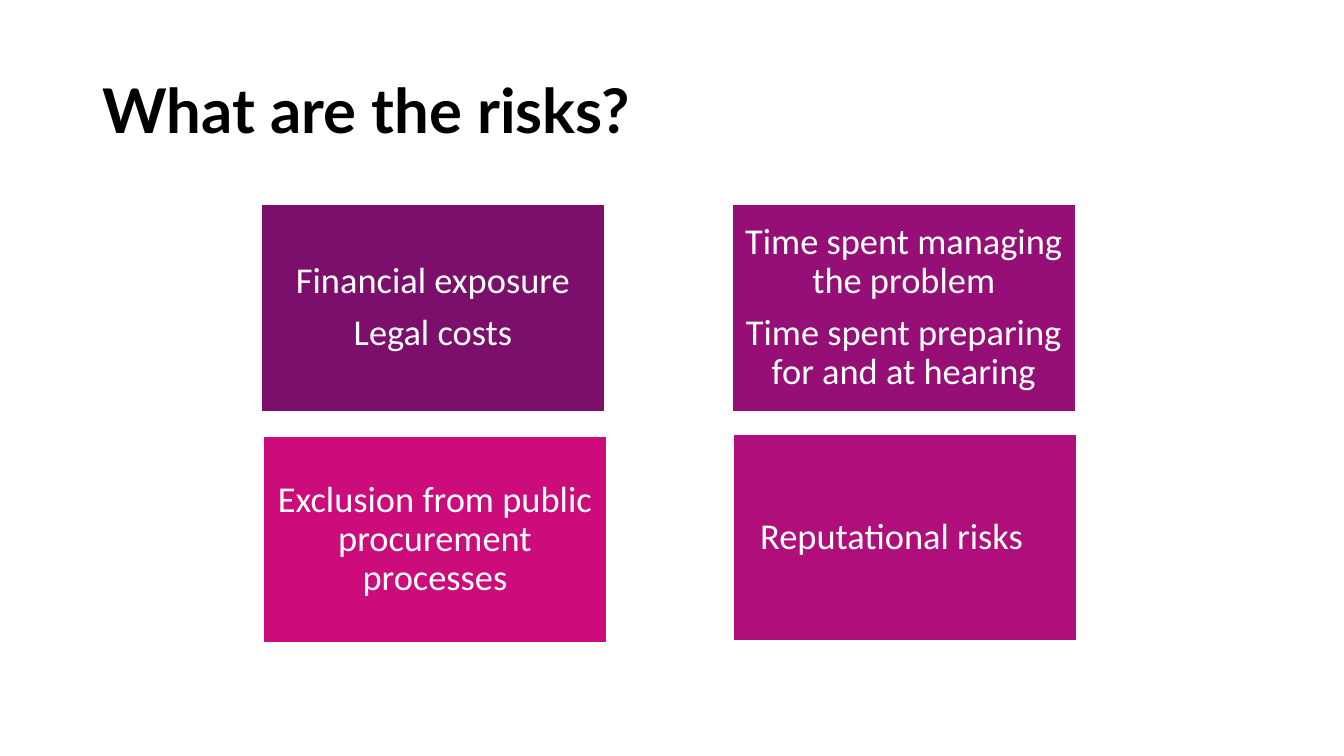
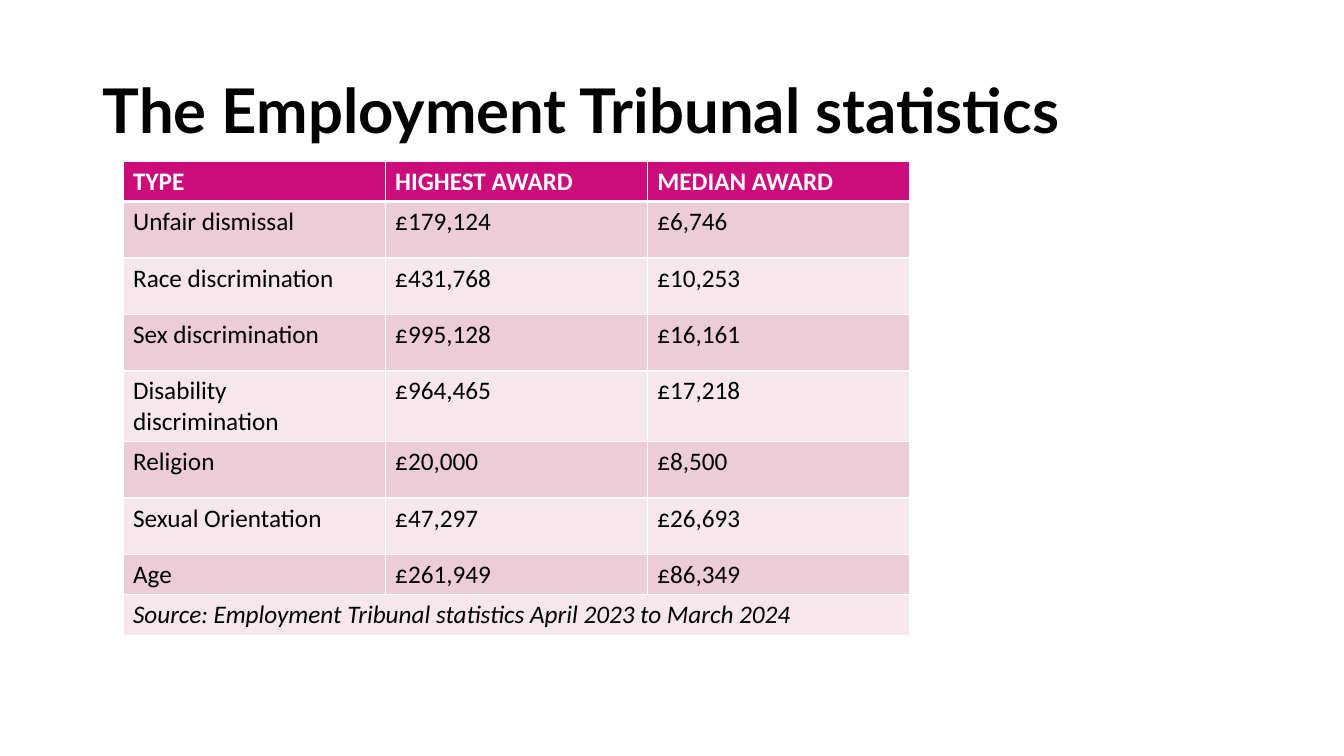
from dataclasses import dataclass

from lxml.etree import SubElement
from pptx import Presentation
from pptx.dml.color import RGBColor
from pptx.enum.shapes import MSO_SHAPE
from pptx.enum.text import MSO_ANCHOR, PP_ALIGN
from pptx.oxml.ns import qn
from pptx.slide import Slide
from pptx.table import _Cell
from pptx.util import Emu, Pt

EMU_PER_PX = 9144  # 100 px to the inch


@dataclass(frozen=True)
class Theme:
    white: str = "FFFFFF"
    black: str = "000000"
    purple: str = "7C0F6C"
    plum: str = "960F76"
    magenta: str = "B00E7B"
    pink: str = "CC0C7B"
    bands: tuple[str, str] = ("ECCCD7", "F6E7EC")
    title_font: str = "Lato"
    body_font: str = "Calibri"
    title_size: int = 44
    card_size: int = 26
    table_size: int = 18


@dataclass(frozen=True)
class Card:
    left: int
    top: int
    color: str
    lines: tuple[str, ...]
    right_inset: int = 11


@dataclass(frozen=True)
class AwardRow:
    height: int
    values: tuple[str, ...]


THEME = Theme()
CARD_WIDTH, CARD_HEIGHT, CARD_INSET = 341, 205, 11
COLUMN_WIDTH = 260

CARDS = (
    Card(259, 203, THEME.purple, ("Financial exposure", "Legal costs")),
    Card(726, 203, THEME.plum, ("Time spent managing the problem",
                                "Time spent preparing for and at hearing")),
    Card(727, 431, THEME.magenta, ("Reputational risks",), right_inset=37),
    Card(261, 433, THEME.pink, ("Exclusion from public procurement processes",)),
)

AWARDS = (
    AwardRow(39, ("TYPE", "HIGHEST AWARD", "MEDIAN AWARD")),
    AwardRow(56, ("Unfair dismissal", "£179,124", "£6,746")),
    AwardRow(56, ("Race discrimination", "£431,768", "£10,253")),
    AwardRow(56, ("Sex discrimination", "£995,128", "£16,161")),
    AwardRow(68, ("Disability discrimination", "£964,465", "£17,218")),
    AwardRow(56, ("Religion", "£20,000", "£8,500")),
    AwardRow(56, ("Sexual Orientation", "£47,297", "£26,693")),
    AwardRow(39, ("Age", "£261,949", "£86,349")),
    AwardRow(39, ("Source: Employment Tribunal statistics April 2023 to March 2024",)),
)


def px(length: int) -> Emu:
    return Emu(length * EMU_PER_PX)


def rgb(color: str) -> RGBColor:
    return RGBColor.from_string(color)


def style_font(font, name: str, size: int, color: str,
               bold: bool = False, italic: bool = False) -> None:
    font.name = name
    font.size = Pt(size)
    font.color.rgb = rgb(color)
    font.bold = bold
    font.italic = italic


def add_page(deck, title: str) -> Slide:
    """Add a blank page that carries the shared title."""
    page = deck.slides.add_slide(deck.slide_layouts[6])
    frame = page.shapes.add_textbox(px(92), px(40), px(1150), px(145)).text_frame
    frame.word_wrap = True
    frame.vertical_anchor = MSO_ANCHOR.MIDDLE
    para = frame.paragraphs[0]
    para.text = title
    para.line_spacing = 0.9
    style_font(para.font, THEME.title_font, THEME.title_size, THEME.black, bold=True)
    return page


def add_card(page: Slide, card: Card) -> None:
    box = page.shapes.add_shape(MSO_SHAPE.RECTANGLE, px(card.left), px(card.top),
                                px(CARD_WIDTH), px(CARD_HEIGHT))
    box.shadow.inherit = False
    box.fill.solid()
    box.fill.fore_color.rgb = rgb(card.color)
    box.line.color.rgb = rgb(THEME.white)
    box.line.width = Pt(1)
    frame = box.text_frame
    frame.word_wrap = True
    frame.vertical_anchor = MSO_ANCHOR.MIDDLE
    frame.margin_left = frame.margin_top = frame.margin_bottom = px(CARD_INSET)
    frame.margin_right = px(card.right_inset)
    for index, line in enumerate(card.lines):
        para = frame.add_paragraph() if index else frame.paragraphs[0]
        para.text = line
        para.alignment = PP_ALIGN.CENTER
        para.line_spacing = 0.9
        para.space_after = Pt(9)
        style_font(para.font, THEME.body_font, THEME.card_size, THEME.white)


def set_borders(cell: _Cell, top: int, bottom: int) -> None:
    """Draw white borders; widths are in points, the sides are always 1."""
    properties = cell._tc.get_or_add_tcPr()
    for side, width in (("L", 1), ("R", 1), ("T", top), ("B", bottom)):
        line = SubElement(properties, qn(f"a:ln{side}"), w=str(Pt(width)))
        fill = SubElement(line, qn("a:solidFill"))
        SubElement(fill, qn("a:srgbClr"), val=THEME.white)


def add_award_table(page: Slide, left: int, top: int) -> None:
    columns = len(AWARDS[0].values)
    last = len(AWARDS) - 1
    table = page.shapes.add_table(
        len(AWARDS), columns, px(left), px(top), px(COLUMN_WIDTH * columns),
        px(sum(row.height for row in AWARDS))).table
    table.horz_banding = False
    for column in table.columns:
        column.width = px(COLUMN_WIDTH)
    for index, row in enumerate(AWARDS):
        table.rows[index].height = px(row.height)
        header = index == 0
        for cell in table.rows[index].cells:
            set_borders(cell, 3 if index == 1 else 1, 3 if header else 1)
            cell.fill.solid()
            cell.fill.fore_color.rgb = rgb(THEME.pink if header else THEME.bands[(index - 1) % 2])
        for position, value in enumerate(row.values):
            para = table.cell(index, position).text_frame.paragraphs[0]
            para.text = value
            style_font(para.font, THEME.body_font, THEME.table_size,
                       THEME.white if header else THEME.black,
                       bold=header, italic=index == last)
    table.cell(last, 0).merge(table.cell(last, columns - 1))


def main() -> None:
    deck = Presentation()
    deck.slide_width, deck.slide_height = px(1333), px(750)
    risks = add_page(deck, "What are the risks?")
    for card in CARDS:
        add_card(risks, card)
    statistics = add_page(deck, "The Employment Tribunal statistics")
    add_award_table(statistics, 122, 160)
    deck.save("out.pptx")


if __name__ == "__main__":
    main()
